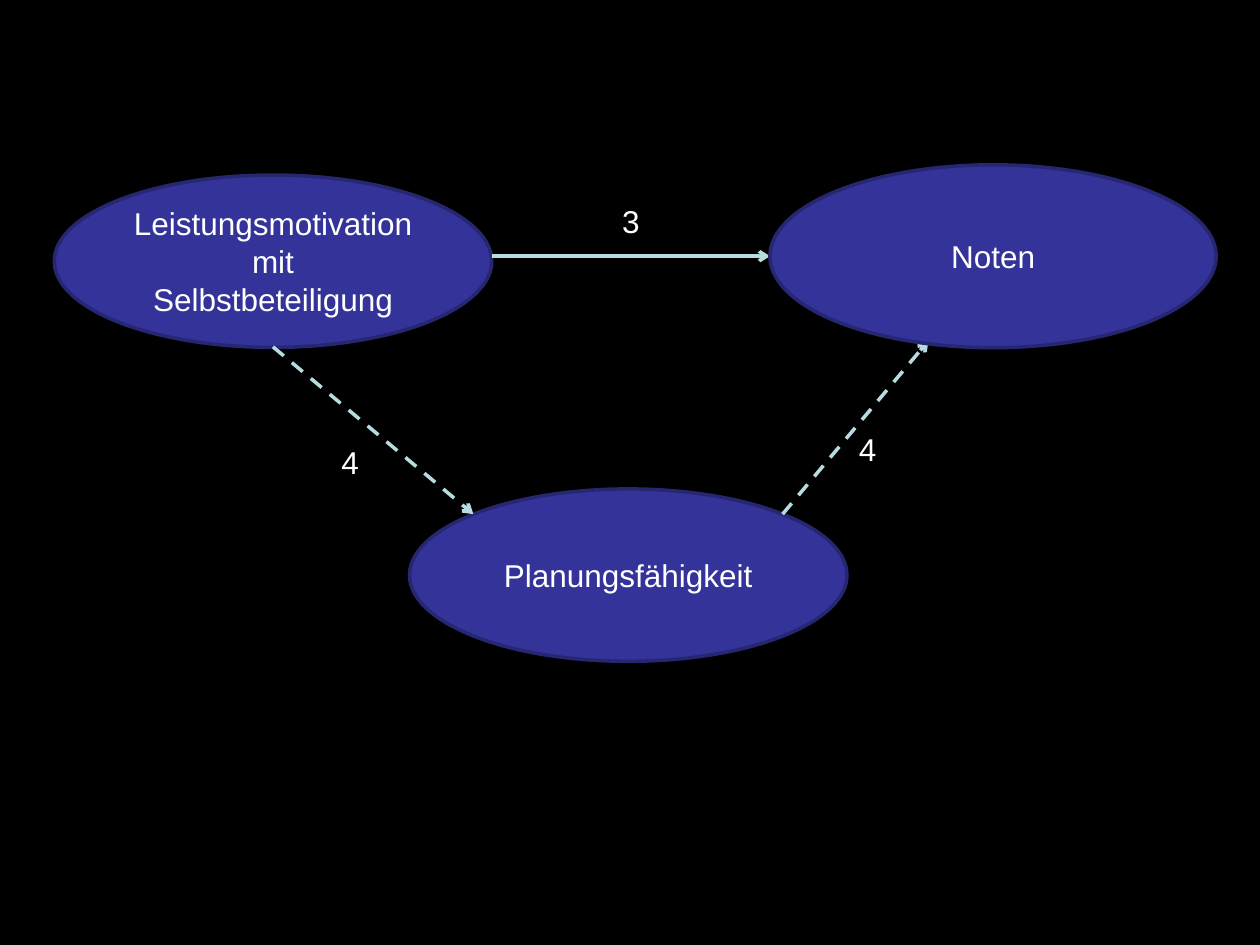
"""Build a path diagram of motivation, planning and grades."""
from dataclasses import dataclass

from pptx import Presentation
from pptx.dml.color import RGBColor as RGB
from pptx.enum.dml import MSO_LINE as Dash
from pptx.enum.shapes import MSO_CONNECTOR as Link, MSO_SHAPE as Form
from pptx.enum.text import MSO_ANCHOR as Anchor, MSO_AUTO_SIZE as Fit, PP_ALIGN as Align
from pptx.oxml.ns import qn
from pptx.shapes.shapetree import SlideShapes as Shapes
from pptx.text.text import TextFrame as Frame
from pptx.util import Pt
from lxml.etree import SubElement as Sub


@dataclass(frozen=True)
class Theme:
    back: RGB = RGB(0x00, 0x00, 0x00)
    fill: RGB = RGB(0x33, 0x33, 0x99)
    edge: RGB = RGB(0x26, 0x26, 0x71)
    arrow: RGB = RGB(0xB6, 0xDC, 0xDF)
    text: RGB = RGB(0xFF, 0xFF, 0xFF)
    font: str = "Arial"
    size: float = 18
    line: float = 2


@dataclass(frozen=True)
class Node:
    text: str
    left: float
    top: float
    width: float = 250
    height: float = 98.5


@dataclass(frozen=True)
class Arrow:
    start: tuple[float, float]
    end: tuple[float, float]
    dashed: bool = True


@dataclass(frozen=True)
class Label:
    text: str
    left: float
    top: float


THEME = Theme()
CAUSES = [
    Node("Leistungsmotivation mit Selbstbeteiligung", 31, 100),
    Node("Planungsfähigkeit", 234, 279.4),
]
GRADES = Node("Noten", 440, 94.2, 255, 104.5)
ARROWS = [
    Arrow((281, 146.4), (440, 146.4), dashed=False),
    Arrow((156, 198.2), (270.5, 293.8)),
    Arrow((447.2, 293.8), (530.5, 194.8)),
]
LABELS = [Label("3", 348.5, 111.8), Label("4", 188, 249.8), Label("4", 483.8, 242.2)]


def write(frame: Frame, text: str, align: Align) -> None:
    """Fill a frame with one paragraph in the theme's type."""
    para = frame.paragraphs[0]
    para.text = text
    para.alignment = align
    para.font.name = THEME.font
    para.font.size = Pt(THEME.size)
    para.font.color.rgb = THEME.text


def draw_node(shapes: Shapes, node: Node) -> None:
    """Draw an ellipse with centred text."""
    oval = shapes.add_shape(
        Form.OVAL, Pt(node.left), Pt(node.top), Pt(node.width), Pt(node.height)
    )
    oval.shadow.inherit = False
    oval.fill.solid()
    oval.fill.fore_color.rgb = THEME.fill
    oval.line.color.rgb = THEME.edge
    oval.line.width = Pt(THEME.line)
    frame = oval.text_frame
    frame.word_wrap = True
    frame.vertical_anchor = Anchor.MIDDLE
    write(frame, node.text, Align.CENTER)


def draw_arrow(shapes: Shapes, arrow: Arrow) -> None:
    """Draw a straight arrow with an open head."""
    ends = [Pt(value) for value in (*arrow.start, *arrow.end)]
    link = shapes.add_connector(Link.STRAIGHT, *ends)
    link.line.color.rgb = THEME.arrow
    link.line.width = Pt(THEME.line)
    if arrow.dashed:
        link.line.dash_style = Dash.DASH
    Sub(link.line._get_or_add_ln(), qn("a:tailEnd"), type="arrow")
    Sub(link._element.spPr, qn("a:effectLst"))


def draw_label(shapes: Shapes, label: Label) -> None:
    """Place a number beside an arrow."""
    box = shapes.add_textbox(Pt(label.left), Pt(label.top), Pt(24.5), Pt(29))
    frame = box.text_frame
    frame.word_wrap = False
    frame.auto_size = Fit.SHAPE_TO_FIT_TEXT
    write(frame, label.text, Align.LEFT)


def main() -> None:
    """Build and save the slide."""
    deck = Presentation()
    deck.slide_width, deck.slide_height = Pt(720), Pt(540)
    slide = deck.slides.add_slide(deck.slide_layouts[6])
    slide.background.fill.solid()
    slide.background.fill.fore_color.rgb = THEME.back
    for node in CAUSES:
        draw_node(slide.shapes, node)
    for arrow in ARROWS:
        draw_arrow(slide.shapes, arrow)
    for label in LABELS:
        draw_label(slide.shapes, label)
    draw_node(slide.shapes, GRADES)
    deck.save("out.pptx")


if __name__ == "__main__":
    main()
